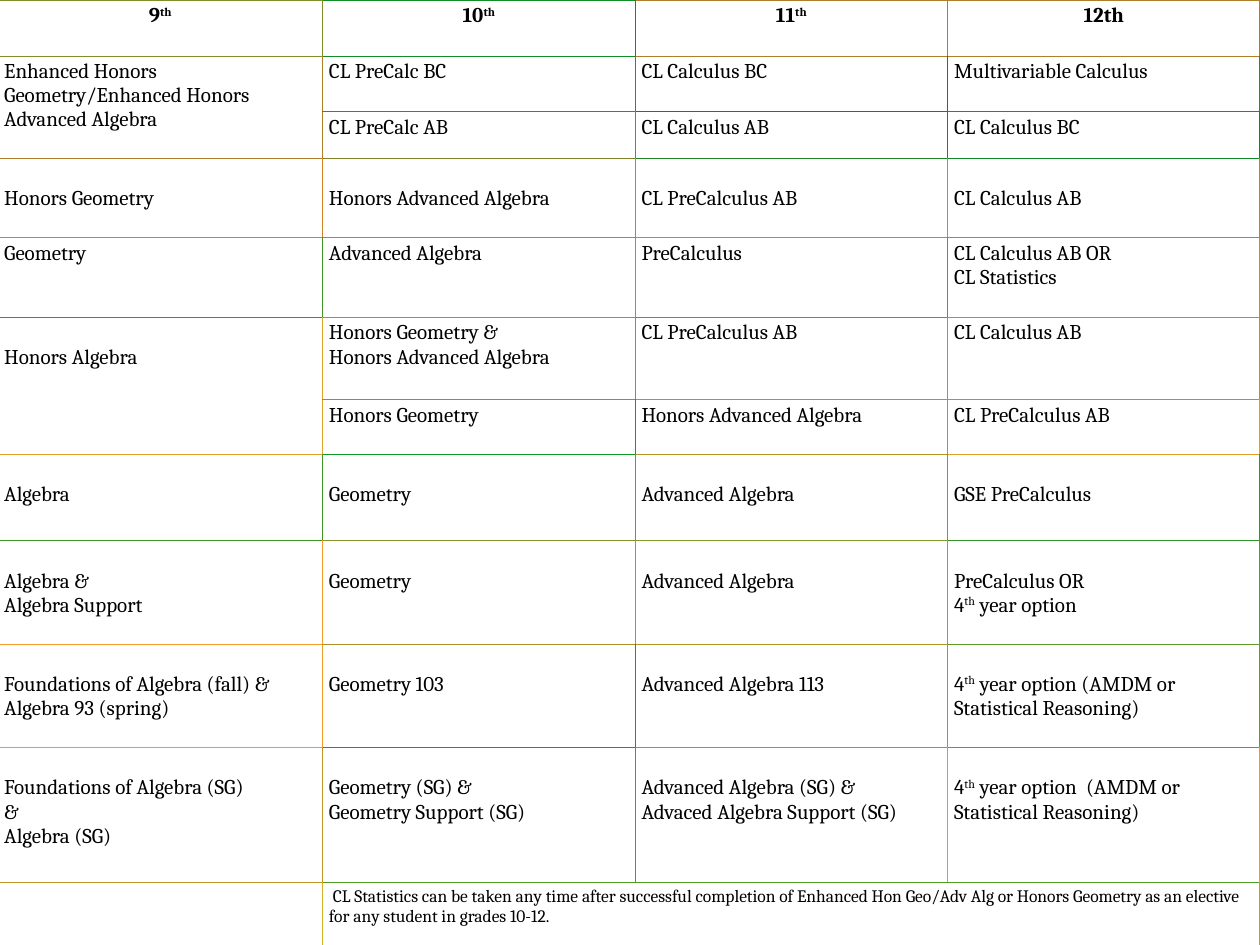
"""Build a slide with the table of math course paths for grades 9 to 12."""
from pptx import Presentation, util as u
from pptx.dml.color import RGBColor
from pptx.enum import text as t
from pptx.oxml import parse_xml
from pptx.oxml.ns import nsdecls


def write(cell, words, size=12, bold=False, align=t.PP_ALIGN.LEFT, drop=0):
    cell.margin_left = cell.margin_right = u.Pt(3.6)
    cell.margin_top, cell.margin_bottom = u.Pt(2.16 + drop), u.Pt(2.16)
    frame = cell.text_frame
    for i, line in enumerate(words.split("\n")):
        para = frame.add_paragraph() if i else frame.paragraphs[0]
        para.alignment = align
        for j, part in enumerate(line.split("^")):
            if not part:
                continue
            run = para.add_run()
            run.text = part
            font = run.font
            font.name, font.size, font.bold = "Cambria", u.Pt(size), bold
            font.color.rgb = RGBColor.from_string("000000")
            if j % 2:
                run._r.get_or_add_rPr().set("baseline", "30000")


def edge(cell, **sides):
    props = cell._tc.get_or_add_tcPr()
    for side, hue in sides.items():
        props.append(parse_xml(
            f'<a:ln{side} {nsdecls("a")} w="{u.Pt(0.6)}"><a:solidFill>'
            f'<a:srgbClr val="{hue}"/></a:solidFill></a:ln{side}>'))


rows = [
    (32, 0, ["9^th^", "10^th^", "11^th^", "12th"]),
    (32, 0, ["Enhanced Honors Geometry/Enhanced Honors Advanced Algebra",
             "CL PreCalc BC", "CL Calculus BC", "Multivariable Calculus"]),
    (26.4, 0, ["", "CL PreCalc AB", "CL Calculus AB", "CL Calculus BC"]),
    (45.6, 14, ["Honors Geometry", "Honors Advanced Algebra",
                "CL PreCalculus AB", "CL Calculus AB"]),
    (45.4, 0, ["Geometry", "Advanced Algebra", "PreCalculus",
               "CL Calculus AB OR\nCL Statistics"]),
    (47.2, 0, ["Honors Algebra", "Honors Geometry &\nHonors Advanced Algebra",
               "CL PreCalculus AB", "CL Calculus AB"]),
    (31.4, 0, ["", "Honors Geometry", "Honors Advanced Algebra",
               "CL PreCalculus AB"]),
    (49.2, 14, ["Algebra", "Geometry", "Advanced Algebra", "GSE PreCalculus"]),
    (59, 14, ["Algebra &\nAlgebra Support", "Geometry", "Advanced Algebra",
              "PreCalculus OR\n4^th^ year option"]),
    (59.2, 14, ["Foundations of Algebra (fall) &\nAlgebra 93 (spring)",
                "Geometry 103", "Advanced Algebra 113",
                "4^th^ year option (AMDM or Statistical Reasoning)"]),
    (77.2, 14, ["Foundations of Algebra (SG)\n&\nAlgebra (SG)",
                "Geometry (SG) &\nGeometry Support (SG)",
                "Advanced Algebra (SG) &\nAdvaced Algebra Support (SG)",
                "4^th^ year option  (AMDM or Statistical Reasoning)"]),
    (174, 0, ["", " CL Statistics can be taken any time after successful "
              "completion of Enhanced Hon Geo/Adv Alg or Honors Geometry as an "
              "elective for any student in grades 10-12.", "", ""]),
]
hues = [line.split() for line in """808F29 108C29 B07D29 B07D29
B07D29 507E29 108229 407F29
B07D29 808029 208129 108729
D08529 B08729 D08529 B08729
409329 A09229 609B29 B09629
E0A229 809929 B09629 B09629
E0A229 109B29 B09629 E09D29
409329 809429 809929 309429
F09C29 B09129 B09629 609B29
F09C29 209529 A09729 709529
C09529 509C29 E09829 F09C29
D0B229 B0A529 B0A529 B0A529""".splitlines()]
wide = [185.6, 178.6, 178.6, 178.4]

deck = Presentation()
deck.slide_width, deck.slide_height = u.Pt(720), u.Pt(540)
slide = deck.slides.add_slide(deck.slide_layouts[6])
high = sum(row[0] for row in rows)
grid = slide.shapes.add_table(len(rows), len(wide), u.Pt(-1.2), 0,
                              u.Pt(sum(wide)), u.Pt(high)).table
grid.first_row = grid.horz_banding = False
for col, width in zip(grid.columns, wide):
    col.width = u.Pt(width)

for r, (height, drop, words) in enumerate(rows):
    grid.rows[r].height = u.Pt(height)
    for c, word in enumerate(words):
        cell, hue = grid.cell(r, c), hues[r][c]
        edge(cell, L=hues[r][max(c - 1, 0)], R=hue,
             T=hues[max(r - 1, 0)][c], B=hue)
        cell.fill.background()
        if word:
            write(cell, word, size=10 if r == len(rows) - 1 else 12,
                  bold=r == 0, drop=14 if word == "Honors Algebra" else drop,
                  align=t.PP_ALIGN.LEFT if r else t.PP_ALIGN.CENTER)

for first, last in [((1, 0), (2, 0)), ((5, 0), (6, 0)), ((11, 1), (11, 3))]:
    grid.cell(*first).merge(grid.cell(*last))

deck.save("out.pptx")
